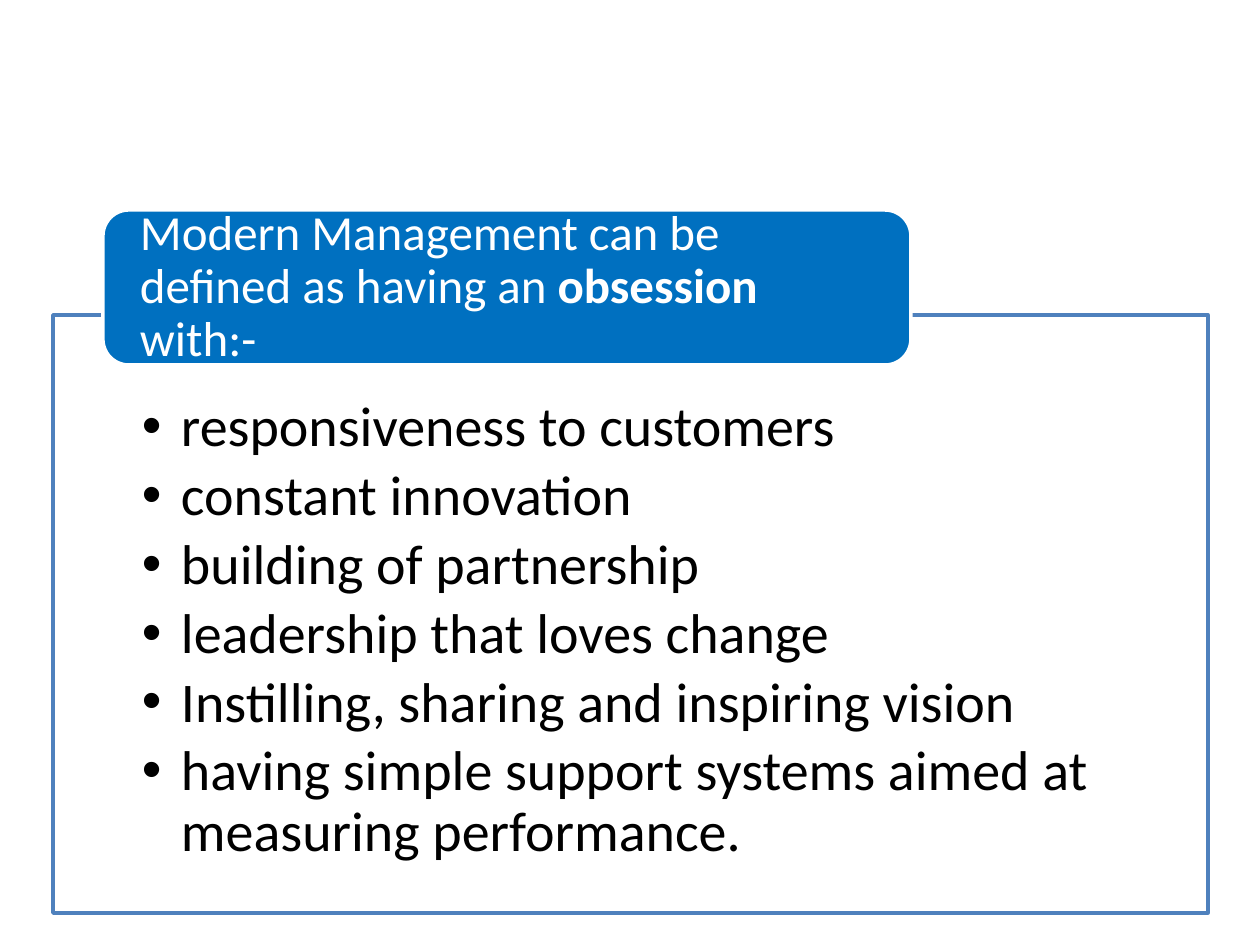
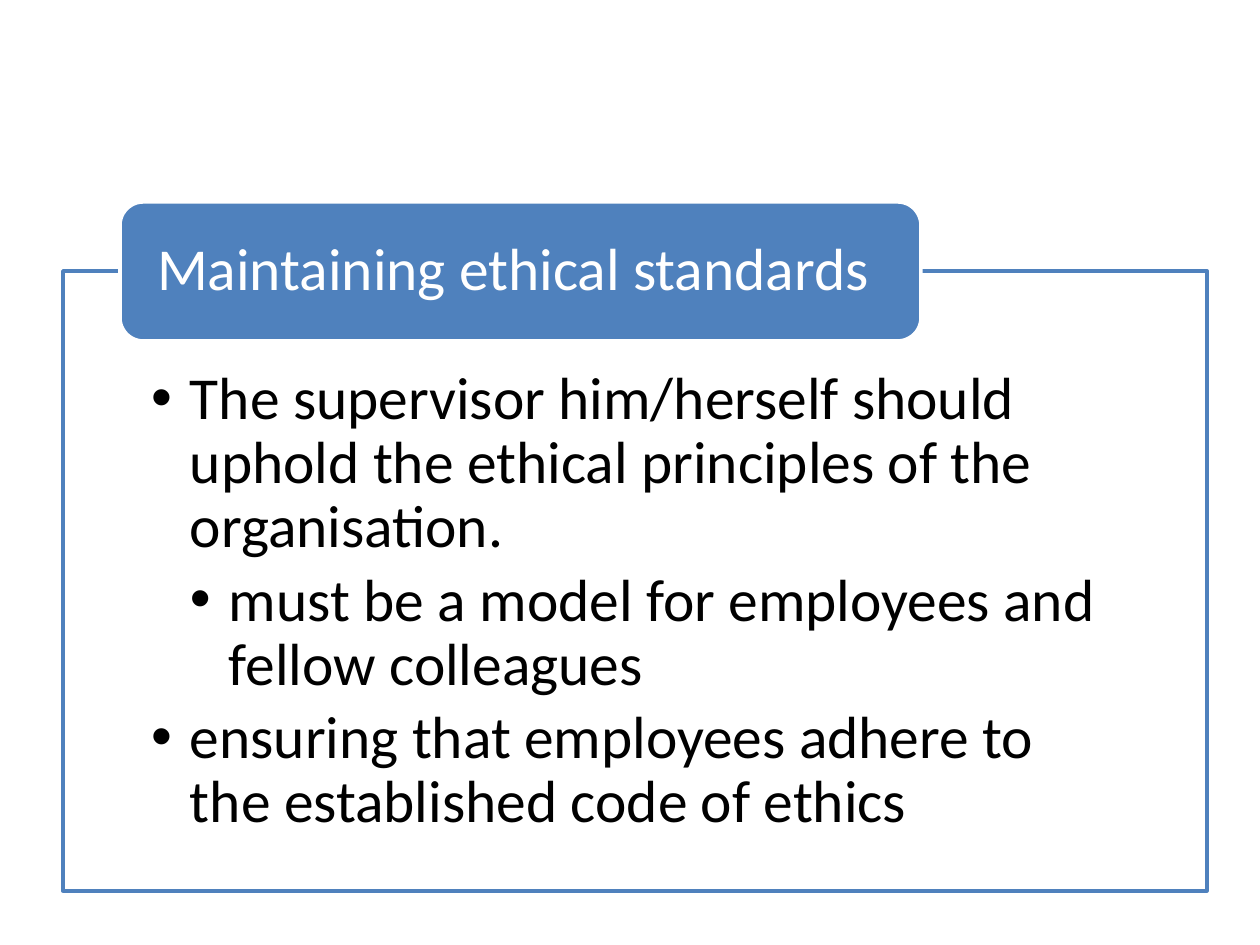
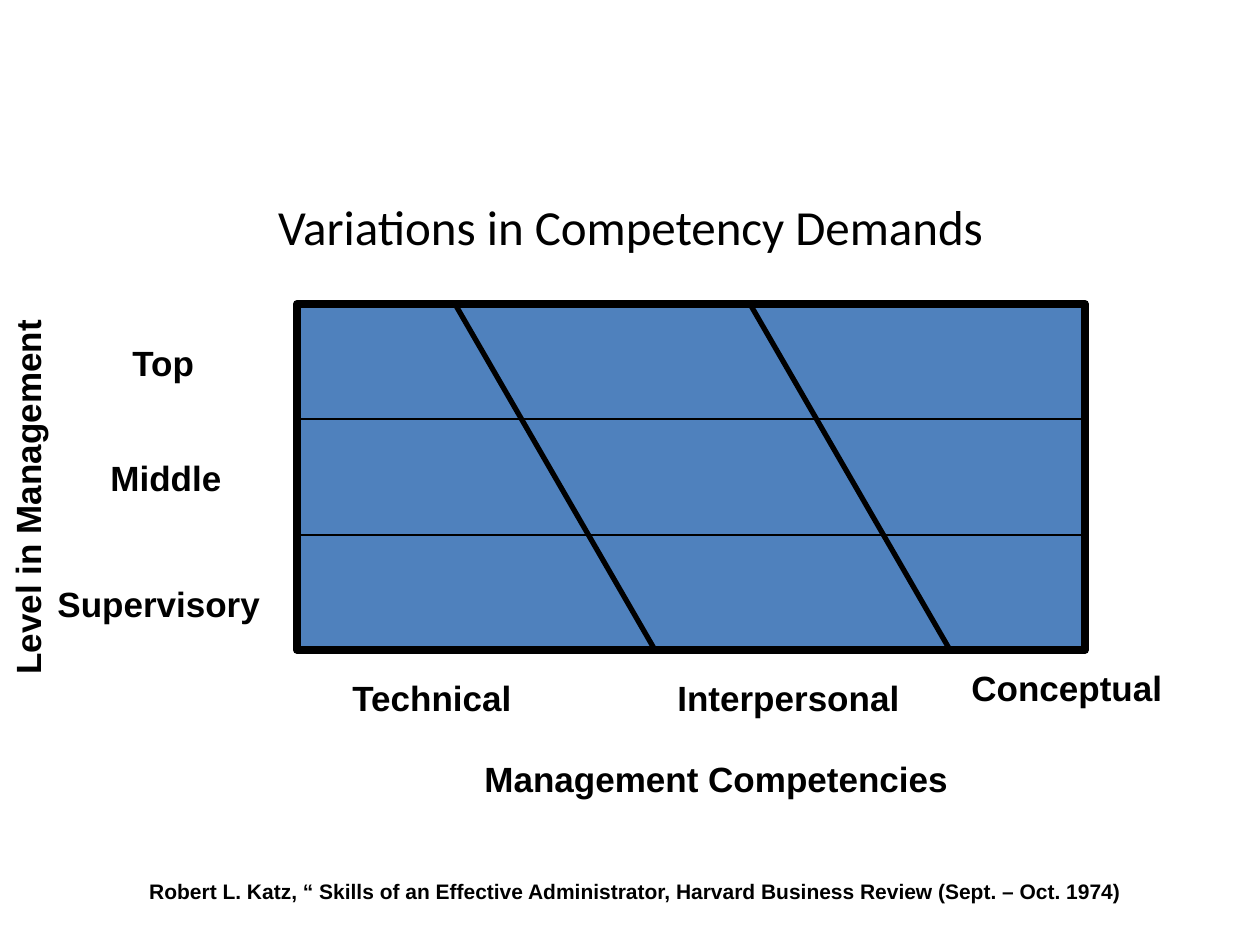
from lxml.etree import SubElement
from pptx import Presentation
from pptx.dml.color import RGBColor
from pptx.enum.shapes import MSO_CONNECTOR as Connector, MSO_SHAPE as Shape
from pptx.enum.text import MSO_ANCHOR as Anchor, MSO_AUTO_SIZE as AutoSize, PP_ALIGN as Align
from pptx.oxml.ns import qn
from pptx.util import Emu, Pt

PX_PER_INCH = 126
BLACK, WHITE, BLUE, DEEP_BLUE = "000000", "FFFFFF", "4F81BD", "0070C0"
HEADING_FONT, LABEL_FONT = "Calibri", "Arial"
TITLE_AND_CONTENT, TITLE_ONLY = 1, 5
BULLET_INDENT = 39
TAB_INSET = 7
SIDES = ("left", "top", "width", "height")
MARGINS = ("margin_left", "margin_top", "margin_right", "margin_bottom")


def px(length):
    return Emu(round(length * 914400 / PX_PER_INCH))


def color(value):
    return RGBColor.from_string(value)


def apply(target, values):
    for name, value in values.items():
        setattr(target, name, value)


def place(box, area):
    apply(box, {side: px(length) for side, length in zip(SIDES, area)})


def set_frame(box, margins=None, **values):
    frame = box.text_frame
    apply(frame, {"word_wrap": True, "auto_size": AutoSize.NONE, **values})
    if margins:
        apply(frame, {side: px(length) for side, length in zip(MARGINS, margins)})
    return frame


def write(para, text, size, font, ink, bold=False):
    span = para.add_run()
    span.text = text
    apply(span.font, {"name": font, "size": Pt(size), "bold": bold})
    span.font.color.rgb = color(ink)


def add_block(page, kind, area, fill, line, width, opacity=100):
    block = page.shapes.add_shape(kind, *map(px, area))
    block.shadow.inherit = False
    block.fill.solid()
    block.fill.fore_color.rgb = color(fill)
    block.line.color.rgb = color(line)
    block.line.width = Pt(width)
    if opacity < 100:
        tint = block.fill._xPr.find(qn("a:solidFill"))[0]
        SubElement(tint, qn("a:alpha"), val=str(opacity * 1000))
    return block


def add_line(page, start, end, width):
    line = page.shapes.add_connector(Connector.STRAIGHT, *map(px, start + end))
    line.line.color.rgb = color(BLACK)
    line.line.width = Pt(width)
    SubElement(line._element.spPr, qn("a:effectLst"))


def add_label(page, text, left, top, width, height=54, size=20, align=Align.LEFT):
    box = page.shapes.add_textbox(*map(px, (left, top, width, height)))
    para = set_frame(box).paragraphs[0]
    para.alignment = align
    write(para, text, size, LABEL_FONT, BLACK, True)
    return box


def set_bullet(para, level):
    props = para._p.get_or_add_pPr()
    props.set("marL", str(px(BULLET_INDENT * (level + 1))))
    props.set("indent", str(-px(BULLET_INDENT)))
    SubElement(props, qn("a:buChar"), char="•")
    para.level = level


def fill_title(page, spans, area, size, ink, align, margins=None, spacing=1.0, anchor=Anchor.MIDDLE):
    title = page.shapes.title
    place(title, area)
    para = set_frame(title, margins, vertical_anchor=anchor).paragraphs[0]
    apply(para, {"alignment": align, "line_spacing": spacing})
    for text, bold in spans:
        write(para, text, size, HEADING_FONT, ink, bold)
    return title


def fill_list(page, items, area, size, margins):
    body = page.placeholders[1]
    place(body, area)
    frame = set_frame(body, margins, vertical_anchor=Anchor.TOP)
    for index, (text, level) in enumerate(items):
        para = frame.add_paragraph() if index else frame.paragraphs[0]
        set_bullet(para, level)
        apply(para, {"line_spacing": 0.9, "space_before": Pt(0), "space_after": Pt(size * 0.15)})
        write(para, text, size, HEADING_FONT, BLACK)
    return body


def add_list_page(deck, heading, heading_size, tab_area, tab_fill, items, item_size, frame_area, margins):
    page = deck.slides.add_slide(deck.slide_layouts[TITLE_AND_CONTENT])
    add_block(page, Shape.RECTANGLE, frame_area, WHITE, BLUE, 2, opacity=90)
    body = fill_list(page, items, frame_area, item_size, margins)
    tab = add_block(page, Shape.ROUNDED_RECTANGLE, tab_area, tab_fill, WHITE, 2)
    left, top, width, height = tab_area
    text_area = (left + TAB_INSET, top + TAB_INSET, width - 2 * TAB_INSET, height - 2 * TAB_INSET)
    title = fill_title(page, heading, text_area, heading_size, WHITE, Align.LEFT, (30, 0, 30, 0), 0.9)
    tab._element.addprevious(body._element)
    tab._element.addnext(title._element)


def add_competency_page(deck):
    page = deck.slides.add_slide(deck.slide_layouts[TITLE_ONLY])
    fill_title(page, [("Variations in Competency Demands", False)], (53, 168, 1155, 94),
               28, BLACK, Align.CENTER, anchor=Anchor.BOTTOM)
    axis = add_label(page, "Level in Management", -183, 450, 420)
    axis.rotation = 270
    add_label(page, "Management Competencies", 472, 751, 514)

    left, top, width, height = grid = (297, 304, 788, 346)
    add_block(page, Shape.RECTANGLE, grid, BLUE, BLACK, 4.5)
    for start in (455, 750):
        add_line(page, (start, top), (start + 200, top + height), 3)
    for row in (1, 2):
        level = top + round(height * row / 3)
        add_line(page, (left, level), (left + width, level), 0.75)

    labels = [
        ("Top", 120, 335, 147),
        ("Middle", 98, 450, 168),
        ("Supervisory", 45, 576, 231),
        ("Technical", 340, 670, 189),
        ("Interpersonal", 665, 670, 262),
        ("Conceptual", 959, 660, 231),
    ]
    for label in labels:
        add_label(page, *label)
    add_label(page, "Robert L. Katz, “ Skills of an Effective Administrator, "
              "Harvard Business Review (Sept. – Oct. 1974)",
              53, 872, 1165, 38, 12, Align.CENTER)


def main():
    deck = Presentation()
    apply(deck, {"slide_width": px(1260), "slide_height": px(945)})
    add_list_page(
        deck,
        [("Modern Management can be defined as having an ", False), ("obsession", True), (" with:-", False)],
        28, (103, 210, 808, 155), DEEP_BLUE,
        [
            ("responsiveness to customers", 0),
            ("constant innovation", 0),
            ("building of partnership", 0),
            ("leadership that loves change", 0),
            ("Instilling, sharing and inspiring vision", 0),
            ("having simple support systems aimed at measuring performance.", 0),
        ],
        32, (53, 315, 1155, 598), (89, 83, 89, 31))
    add_list_page(
        deck, [("Maintaining ethical standards", False)],
        34, (120, 202, 801, 139), BLUE,
        [
            ("The supervisor him/herself should uphold the ethical principles of the organisation.", 0),
            ("must be a model for employees and fellow colleagues", 1),
            ("ensuring that employees adhere to the established code of ethics", 0),
        ],
        34, (63, 271, 1144, 620), (88, 97, 88, 33))
    add_competency_page(deck)
    deck.save("out.pptx")


if __name__ == "__main__":
    main()
